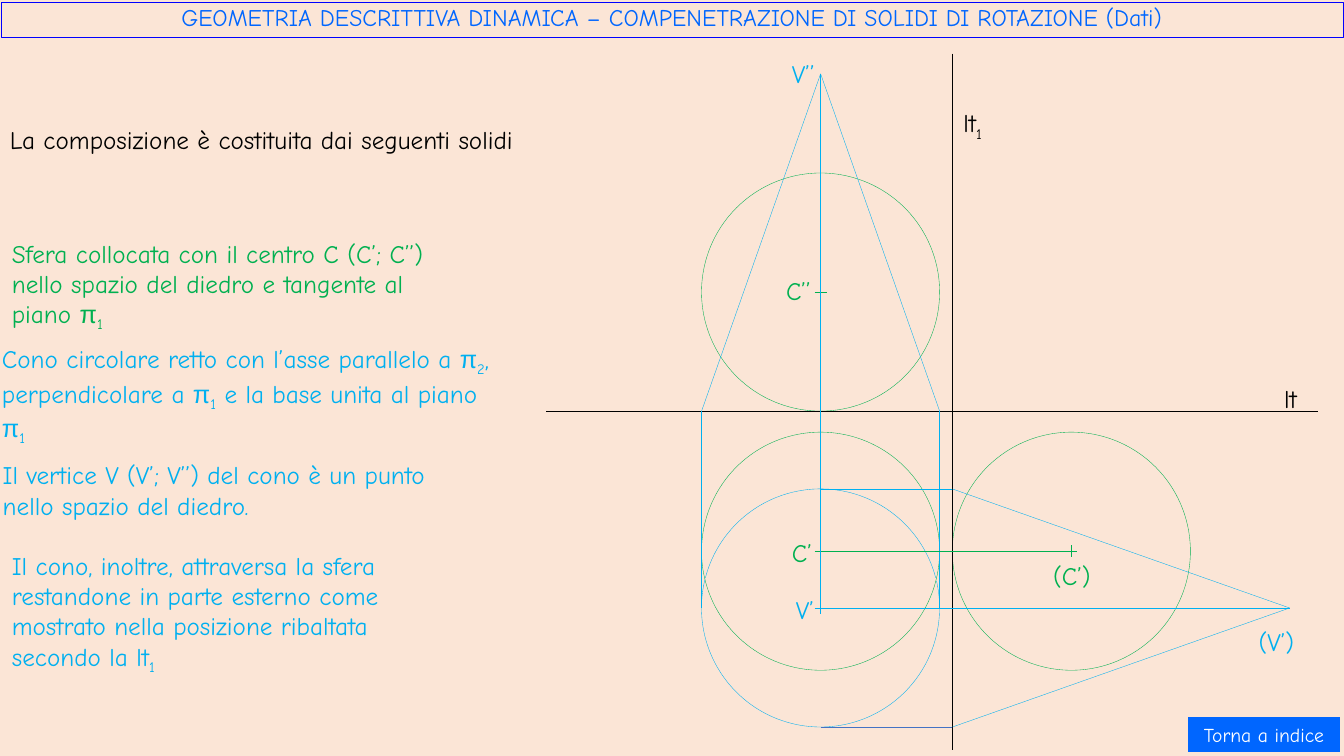
import dataclasses
import typing

import pptx
import pptx.dml.color
import pptx.enum.shapes
import pptx.enum.text
import pptx.oxml
import pptx.oxml.ns
import pptx.util

Cm = pptx.util.Cm
SHAPE = pptx.enum.shapes.MSO_SHAPE
COLORS = {
    "background": "FBE5D6", "black": "000000", "white": "FFFFFF", "sphere": "00B050",
    "cone": "00B0F0", "base": "4472C4", "frame": "0000FF", "accent": "0066FF",
}
FONT = "Comic Neue"
HAIRLINE = pptx.util.Pt(0.25)

AXIS_X, GROUND_Y, FOLD_X = 20.68, 10.36, 24.0
RADIUS = 3.0
CROSS_ARM = 0.15
SPHERE_PLAN_Y, CONE_PLAN_Y = 13.89, 15.32
APEX_Y = 1.86
SPHERE_FRONT_Y = GROUND_Y - RADIUS
SPHERE_FOLDED_X = FOLD_X + RADIUS
APEX_FOLDED_X = FOLD_X + GROUND_Y - APEX_Y
CONE_LEFT, CONE_RIGHT = AXIS_X - RADIUS, AXIS_X + RADIUS
CONE_TOP, CONE_BOTTOM = CONE_PLAN_Y - RADIUS, CONE_PLAN_Y + RADIUS


@dataclasses.dataclass(frozen=True)
class Segment:
    x1: float
    y1: float
    x2: float
    y2: float
    color: str


@dataclasses.dataclass(frozen=True)
class Span:
    text: str
    font: str = FONT
    subscript: bool = False


@dataclasses.dataclass(frozen=True)
class Label:
    left: float
    top: float
    width: float
    height: float
    color: str
    spans: tuple[Span, ...]


@dataclasses.dataclass(frozen=True)
class Banner:
    left: float
    top: float
    width: float
    height: float
    kind: typing.Any
    text: str
    size: int
    color: str
    fill: str | None = None
    line: str | None = None
    spacing: float = 1.0


PI = Span("π", "Arial")
SUB_1, SUB_2 = Span("1", subscript=True), Span("2", subscript=True)

SEGMENTS = [
    Segment(AXIS_X, 7.26, AXIS_X, 14.02, "sphere"),
    Segment(13.77, GROUND_Y, 33.22, GROUND_Y, "black"),
    Segment(FOLD_X, 1.35, FOLD_X, 18.9, "black"),
    Segment(AXIS_X, CONE_TOP, FOLD_X, CONE_TOP, "cone"),
    Segment(FOLD_X, CONE_TOP, APEX_FOLDED_X, CONE_PLAN_Y, "cone"),
    Segment(FOLD_X, CONE_BOTTOM, APEX_FOLDED_X, CONE_PLAN_Y, "cone"),
    Segment(CONE_LEFT, CONE_PLAN_Y, CONE_LEFT, GROUND_Y, "cone"),
    Segment(CONE_RIGHT, CONE_PLAN_Y, CONE_RIGHT, GROUND_Y, "cone"),
    Segment(AXIS_X, APEX_Y, CONE_LEFT, GROUND_Y, "cone"),
    Segment(AXIS_X, APEX_Y, CONE_RIGHT, GROUND_Y, "cone"),
    Segment(AXIS_X, CONE_BOTTOM, FOLD_X, CONE_BOTTOM, "base"),
    Segment(AXIS_X, APEX_Y, AXIS_X, 15.21, "cone"),
    Segment(20.85, CONE_PLAN_Y, APEX_FOLDED_X, CONE_PLAN_Y, "cone"),
    Segment(AXIS_X, SPHERE_PLAN_Y, SPHERE_FOLDED_X, SPHERE_PLAN_Y, "sphere"),
]
SPHERE_CENTRES = [
    (AXIS_X, SPHERE_PLAN_Y), (SPHERE_FOLDED_X, SPHERE_PLAN_Y), (AXIS_X, SPHERE_FRONT_Y),
]
CONE_ARCS = [(116.71, 207.22), (208.12, 116.25)]

LABELS = [
    Label(0, 3, 14.94, 1.02, "black",
          (Span("La composizione è costituita dai seguenti solidi"),)),
    Label(0.05, 5.87, 11.84, 2.57, "sphere",
          (Span("Sfera collocata con il centro C (C’; C’’) nello spazio del diedro "
                "e tangente al piano "), PI, SUB_1)),
    Label(-0.2, 8.53, 13.23, 2.57, "cone",
          (Span("Cono circolare retto con l’asse parallelo a "), PI, SUB_2,
           Span(", perpendicolare a "), PI, SUB_1,
           Span(" e la base unita al piano "), PI, SUB_1)),
    Label(-0.18, 11.46, 12.45, 1.8, "cone",
          (Span("Il vertice V (V’; V’’) del cono è un punto nello spazio del diedro."),)),
    Label(0.05, 13.74, 11.84, 3.33, "cone",
          (Span("Il cono, inoltre, attraversa la sfera restandone in parte esterno come "
                "mostrato nella posizione ribaltata secondo la lt"), SUB_1)),
    Label(19.71, 1.35, 1.3, 1.02, "cone", (Span("V’’"),)),
    Label(19.81, 14.86, 1.3, 1.02, "cone", (Span("V’"),)),
    Label(19.71, 13.41, 1.3, 1.02, "sphere", (Span("C’"),)),
    Label(19.56, 6.81, 1.3, 1.02, "sphere", (Span("C’’"),)),
    Label(31.47, 15.67, 1.6, 1.8, "cone", (Span("(V’)"),)),
    Label(26.29, 14, 1.5, 1.8, "sphere", (Span("(C’)"),)),
    Label(32.11, 9.53, 1.42, 1.02, "black", (Span("lt"),)),
    Label(24.03, 2.59, 1.42, 1.02, "black", (Span("lt"), SUB_1)),
]
BANNERS = [
    Banner(0.03, 0.05, 33.81, 0.89, SHAPE.RECTANGLE,
           "GEOMETRIA DESCRITTIVA DINAMICA – COMPENETRAZIONE DI SOLIDI DI ROTAZIONE (Dati)",
           17, "accent", line="frame", spacing=0.8),
    Banner(29.95, 18.06, 3.81, 0.89, SHAPE.ACTION_BUTTON_CUSTOM,
           "Torna a indice", 14, "white", fill="accent"),
]


def rgb(name: str) -> pptx.dml.color.RGBColor:
    return pptx.dml.color.RGBColor.from_string(COLORS[name])


def draw_segment(page, segment: Segment) -> None:
    line = page.shapes.add_connector(
        pptx.enum.shapes.MSO_CONNECTOR.STRAIGHT,
        Cm(segment.x1), Cm(segment.y1), Cm(segment.x2), Cm(segment.y2))
    line.line.color.rgb = rgb(segment.color)
    line.line.width = HAIRLINE
    line._element.spPr.append(pptx.oxml.parse_xml(
        f'<a:effectLst {pptx.oxml.ns.nsdecls("a")}/>'))


def draw_cross(page, x: float, y: float, color: str) -> None:
    draw_segment(page, Segment(x - CROSS_ARM, y, x + CROSS_ARM, y, color))
    draw_segment(page, Segment(x, y - CROSS_ARM, x, y + CROSS_ARM, color))


def draw_shape(page, kind, left: float, top: float, width: float, height: float,
               fill: str | None = None, line: str | None = None):
    shape = page.shapes.add_shape(kind, Cm(left), Cm(top), Cm(width), Cm(height))
    shape.shadow.inherit = False
    if fill:
        shape.fill.solid()
        shape.fill.fore_color.rgb = rgb(fill)
    else:
        shape.fill.background()
    if line:
        shape.line.color.rgb = rgb(line)
        shape.line.width = HAIRLINE
    else:
        shape.line.fill.background()
    return shape


def draw_round(page, kind, x: float, y: float, color: str):
    return draw_shape(page, kind, x - RADIUS, y - RADIUS, 2 * RADIUS, 2 * RADIUS, line=color)


def format_run(run, size: int, color: str, font: str = FONT) -> None:
    run.font.name = font
    run.font.size = pptx.util.Pt(size)
    run.font.color.rgb = rgb(color)


def draw_label(page, label: Label) -> None:
    box = page.shapes.add_textbox(
        Cm(label.left), Cm(label.top), Cm(label.width), Cm(label.height))
    box.text_frame.word_wrap = True
    box.text_frame.auto_size = pptx.enum.text.MSO_AUTO_SIZE.SHAPE_TO_FIT_TEXT
    para = box.text_frame.paragraphs[0]
    for span in label.spans:
        run = para.add_run()
        run.text = span.text
        format_run(run, 18, label.color, span.font)
        if span.subscript:
            run._r.get_or_add_rPr().set("baseline", "-25000")


def draw_banner(page, banner: Banner) -> None:
    shape = draw_shape(page, banner.kind, banner.left, banner.top, banner.width,
                       banner.height, banner.fill, banner.line)
    shape.text_frame.text = banner.text
    shape.text_frame.vertical_anchor = pptx.enum.text.MSO_ANCHOR.MIDDLE
    para = shape.text_frame.paragraphs[0]
    para.alignment = pptx.enum.text.PP_ALIGN.CENTER
    para.line_spacing = banner.spacing
    format_run(para.runs[0], banner.size, banner.color)


def main() -> None:
    deck = pptx.Presentation()
    deck.slide_width, deck.slide_height = Cm(33.87), Cm(19.05)
    page = deck.slides.add_slide(deck.slide_layouts[6])
    page.background.fill.solid()
    page.background.fill.fore_color.rgb = rgb("background")
    for x, y in SPHERE_CENTRES:
        draw_round(page, SHAPE.OVAL, x, y, "sphere")
        draw_cross(page, x, y, "sphere")
    for start, end in CONE_ARCS:
        arc = draw_round(page, SHAPE.ARC, AXIS_X, CONE_PLAN_Y, "cone")
        arc.adjustments[0], arc.adjustments[1] = start, end
    draw_cross(page, AXIS_X, CONE_PLAN_Y, "cone")
    for segment in SEGMENTS:
        draw_segment(page, segment)
    for label in LABELS:
        draw_label(page, label)
    for banner in BANNERS:
        draw_banner(page, banner)
    deck.save("out.pptx")


if __name__ == "__main__":
    main()
